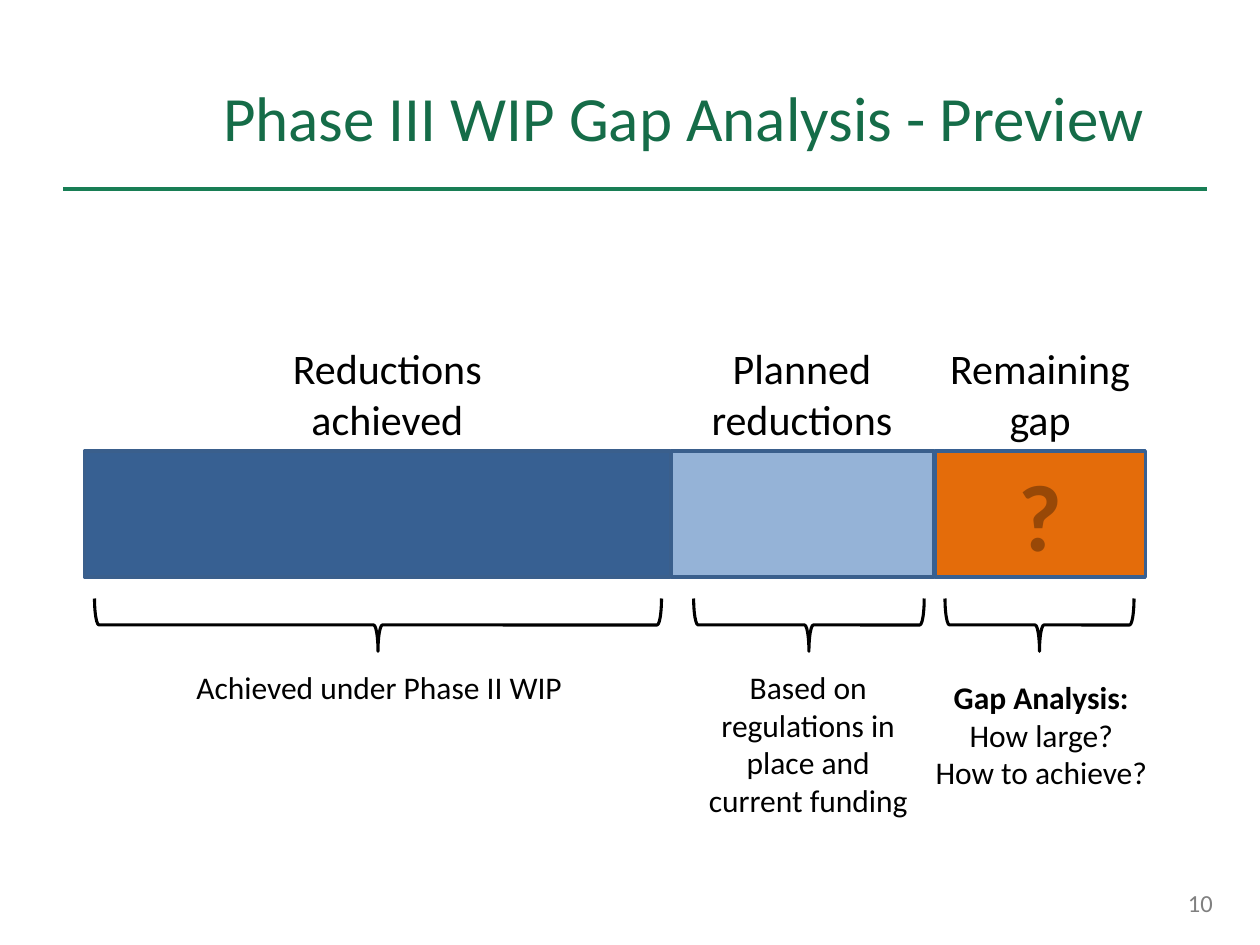
from dataclasses import dataclass
from lxml.etree import SubElement
from pptx import Presentation
from pptx.dml.color import RGBColor
from pptx.enum.shapes import MSO_CONNECTOR as CONN, MSO_SHAPE as SHAPE
from pptx.enum.text import MSO_ANCHOR as ANCHOR, MSO_AUTO_SIZE as AUTO, PP_ALIGN as ALIGN
from pptx.oxml.ns import qn
from pptx.util import Inches, Pt


@dataclass(frozen=True)
class Theme:
    font: str = "Calibri"
    title: str = "156C48"
    rule: str = "187E55"
    text: str = "000000"
    number: str = "808080"
    question: str = "984807"
    achieved: str = "376092"
    planned: str = "95B3D7"
    gap: str = "E46C0A"
    edge: str = "3A5F8C"
    title_size: int = 36
    label_size: int = 24
    note_size: int = 18
    number_size: int = 14
    question_size: int = 54


T = Theme()
rgb = RGBColor.from_string


def write(sp, text, size=T.note_size, color=T.text, align=ALIGN.CENTER,
          anchor=ANCHOR.TOP, auto=AUTO.SHAPE_TO_FIT_TEXT, bold_lines=0):
    tf = sp.text_frame
    tf.word_wrap = True
    tf.auto_size = auto
    tf.vertical_anchor = anchor
    for i, line in enumerate(text.split("\n")):
        p = tf.paragraphs[0] if i == 0 else tf.add_paragraph()
        p.alignment = align
        r = p.add_run()
        r.text = line
        r.font.name = T.font
        r.font.size = Pt(size)
        r.font.bold = i < bold_lines
        r.font.color.rgb = rgb(color)


prs = Presentation()
prs.slide_width, prs.slide_height = Inches(10), Inches(7.5)
s = prs.slides.add_slide(prs.slide_layouts[5])

rule = s.shapes.add_connector(CONN.STRAIGHT, Inches(0.5), Inches(1.5), Inches(9.58), Inches(1.5))
rule.line.color.rgb = rgb(T.rule)
rule.line.width = Pt(2.25)
SubElement(rule._element.spPr, qn("a:effectLst"))

title = s.shapes.title
title.left, title.top, title.width, title.height = map(Inches, (1.67, 0.3, 7.83, 1.25))
write(title, "Phase III WIP Gap Analysis - Preview", size=T.title_size, color=T.title,
      align=ALIGN.LEFT, anchor=ANCHOR.MIDDLE, auto=AUTO.NONE)

bar_top, bar_height = 3.58, 1
segments = [
    (0.67, 4.65, T.achieved, T.edge),
    (5.33, 2.08, T.planned, T.edge),
    (7.42, 1.67, T.gap, T.achieved),
]
for left, width, fill, edge in segments:
    bar = s.shapes.add_shape(SHAPE.RECTANGLE, Inches(left), Inches(bar_top),
                             Inches(width), Inches(bar_height))
    bar.shadow.inherit = False
    bar.fill.solid()
    bar.fill.fore_color.rgb = rgb(fill)
    bar.line.color.rgb = rgb(edge)
    bar.line.width = Pt(2)

labels = [
    (2.06, 2.03, "Reductions achieved"),
    (5.33, 2.07, "Planned reductions"),
    (7.42, 1.67, "Remaining gap"),
]
for left, width, text in labels:
    label = s.shapes.add_textbox(Inches(left), Inches(2.67), Inches(width), Inches(0.91))
    write(label, text, size=T.label_size)

brace_depth, brace_middle = 0.42, 4.96
for center, span in [(3, 4.5), (6.42, 1.83), (8.25, 1.5)]:
    brace = s.shapes.add_shape(SHAPE.RIGHT_BRACE, Inches(center - brace_depth / 2),
                               Inches(brace_middle - span / 2), Inches(brace_depth), Inches(span))
    brace.rotation = 90
    brace.shadow.inherit = False
    brace.fill.background()
    brace.line.color.rgb = rgb(T.text)
    brace.line.width = Pt(1.75)

notes = [
    (1.05, 5.25, 3.92, 0.4, "Achieved under Phase II WIP", 0),
    (5.48, 5.25, 1.87, 1.31, "Based on regulations in place and current funding", 0),
    (7.28, 5.33, 1.97, 1.01, "Gap Analysis:\nHow large?\nHow to achieve?", 1),
]
for left, top, width, height, text, bold_lines in notes:
    note = s.shapes.add_textbox(Inches(left), Inches(top), Inches(width), Inches(height))
    write(note, text, bold_lines=bold_lines)

question = s.shapes.add_textbox(Inches(7.42), Inches(bar_top), Inches(1.67), Inches(bar_height))
write(question, "?", size=T.question_size, color=T.question, anchor=ANCHOR.MIDDLE,
      auto=AUTO.NONE, bold_lines=1)

number = s.shapes.add_textbox(Inches(9.33), Inches(7), Inches(0.5), Inches(0.34))
write(number, "10", size=T.number_size, color=T.number, align=ALIGN.LEFT)

prs.save("out.pptx")
